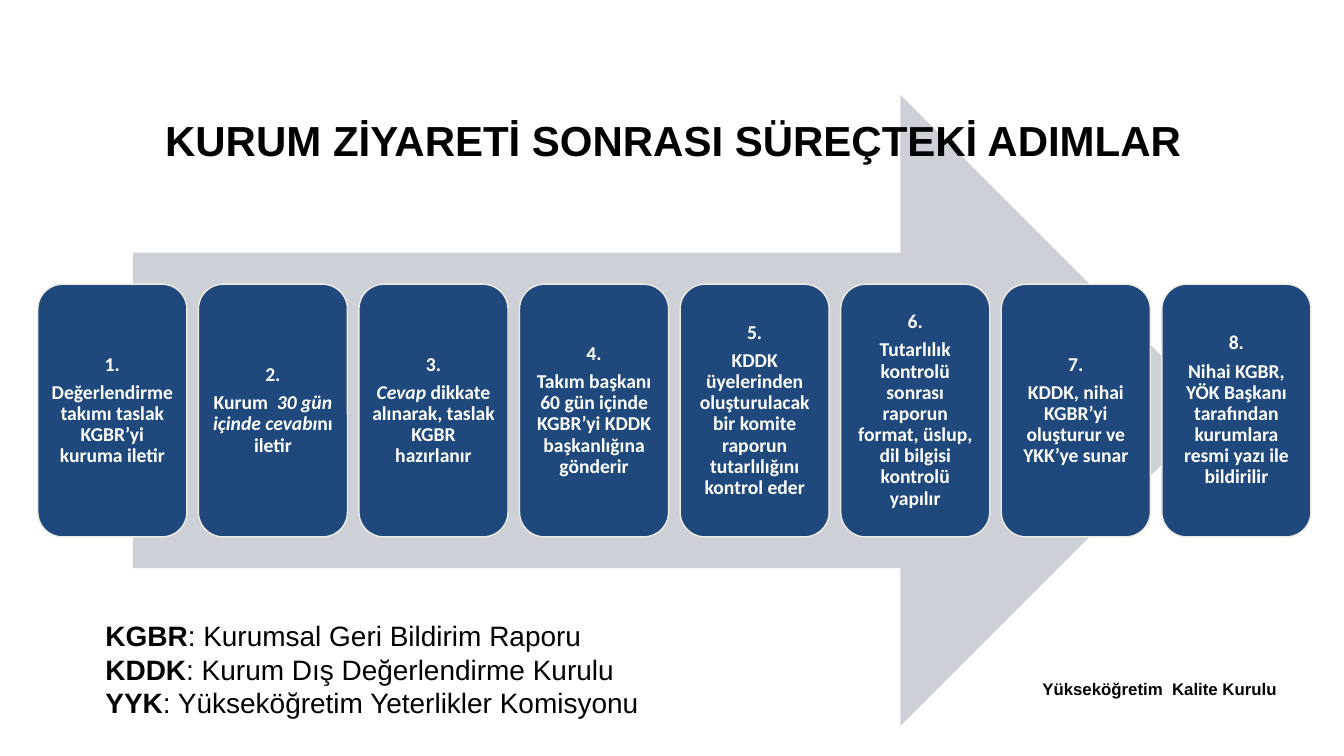
from pptx import Presentation
from pptx.dml.color import RGBColor
from pptx.enum.shapes import MSO_SHAPE as Shape
from pptx.enum.text import MSO_ANCHOR as Anchor, MSO_AUTO_SIZE as AutoSize, PP_ALIGN as Align
from pptx.util import Pt

# Asterisks enclose the emphasised words.
STEPS = [
    "Değerlendirme takımı taslak KGBR’yi kuruma iletir",
    "Kurum  *30 gün içinde cevabı*nı iletir",
    "*Cevap *dikkate alınarak, taslak KGBR hazırlanır",
    "Takım başkanı 60 gün içinde KGBR’yi KDDK başkanlığına gönderir",
    "KDDK üyelerinden oluşturulacak bir komite raporun tutarlılığını kontrol eder",
    "Tutarlılık kontrolü sonrası raporun format, üslup, dil bilgisi kontrolü yapılır",
    "KDDK, nihai KGBR’yi oluşturur ve YKK’ye sunar",
    "Nihai KGBR, YÖK Başkanı tarafından kurumlara resmi yazı ile bildirilir",
]
ABBREVIATIONS = [
    "*KGBR*: Kurumsal Geri Bildirim Raporu",
    "*KDDK*: Kurum Dış Değerlendirme Kurulu",
    "*YYK*: Yükseköğretim Yeterlikler Komisyonu",
]
STEP_LEFT, STEP_PITCH = 54, 229.4


def color(value):
    return RGBColor.from_string(value)


class SlideBuilder:
    HEADING_FONT, STEP_FONT = "Arial", "Calibri"
    BLACK, WHITE = "000000", "FFFFFF"
    ARROW, STEP, STEP_LINE = "CDD0D7", "1F497D", "EEECE1"

    def __init__(self, slide):
        self.slide = slide

    def style(self, paragraph, name, size, ink, bold=None):
        font = paragraph.font
        font.name, font.size, font.bold = name, Pt(size), bold
        font.color.rgb = color(ink)

    def add_runs(self, paragraph, text, italic=None, bold=None):
        """Add runs, applying italic or bold to the starred pieces."""
        for index, piece in enumerate(text.split("*")):
            if piece:
                run = paragraph.add_run()
                run.text = piece
                if index % 2:
                    run.font.italic, run.font.bold = italic, bold

    def shape(self, kind, left, top, width, height, fill, line=None):
        shape = self.slide.shapes.add_shape(kind, Pt(left), Pt(top), Pt(width), Pt(height))
        shape.shadow.inherit = False
        shape.fill.solid()
        shape.fill.fore_color.rgb = color(fill)
        if line:
            shape.line.color.rgb = color(line)
            shape.line.width = Pt(2)
        else:
            shape.line.fill.background()
        return shape

    def step(self, number, text):
        left = STEP_LEFT + (number - 1) * STEP_PITCH
        card = self.shape(Shape.ROUNDED_RECTANGLE, left, 406, 213, 361, self.STEP, self.STEP_LINE)
        frame = card.text_frame
        frame.word_wrap = True
        frame.vertical_anchor = Anchor.MIDDLE
        frame.margin_left = frame.margin_right = Pt(8.4)
        frame.margin_top = frame.margin_bottom = Pt(8.4)
        heading, body = frame.paragraphs[0], frame.add_paragraph()
        self.add_runs(heading, f"{number}.")
        self.add_runs(body, text, italic=True)
        heading.space_after = Pt(9.8)
        for paragraph in (heading, body):
            paragraph.alignment = Align.CENTER
            paragraph.line_spacing = 0.9
            self.style(paragraph, self.STEP_FONT, 28, self.WHITE, True)

    def title(self, text):
        title = self.slide.shapes.title
        title.left, title.top, title.width, title.height = Pt(98), Pt(109.5), Pt(1728), Pt(180)
        frame = title.text_frame
        frame.text = text
        frame.auto_size = AutoSize.NONE
        frame.vertical_anchor = Anchor.MIDDLE
        frame.paragraphs[0].alignment = Align.CENTER
        self.style(frame.paragraphs[0], self.HEADING_FONT, 60, self.BLACK, True)
        # The title stands in front of the arrow.
        title.element.getparent().append(title.element)

    def text(self, left, top, width, height, lines, size, bold=None):
        box = self.slide.shapes.add_textbox(Pt(left), Pt(top), Pt(width), Pt(height))
        frame = box.text_frame
        frame.word_wrap = True
        frame.auto_size = AutoSize.SHAPE_TO_FIT_TEXT
        for index, line in enumerate(lines):
            paragraph = frame.add_paragraph() if index else frame.paragraphs[0]
            self.add_runs(paragraph, line, bold=True)
            self.style(paragraph, self.HEADING_FONT, size, self.BLACK, bold)


def main():
    presentation = Presentation()
    presentation.slide_width, presentation.slide_height = Pt(1920), Pt(1080)
    title_only = presentation.slide_layouts[5]
    builder = SlideBuilder(presentation.slides.add_slide(title_only))

    builder.shape(Shape.RIGHT_ARROW, 190, 135.5, 1547, 901.5, builder.ARROW)
    for number, text in enumerate(STEPS, 1):
        builder.step(number, text)
    builder.title("KURUM ZİYARETİ SONRASI SÜREÇTEKİ ADIMLAR")
    builder.text(143.5, 880.5, 1037.5, 152.5, ABBREVIATIONS, 40)
    builder.text(1482, 966, 380, 36, ["Yükseköğretim  Kalite Kurulu"], 24, True)

    presentation.save("out.pptx")


if __name__ == "__main__":
    main()
